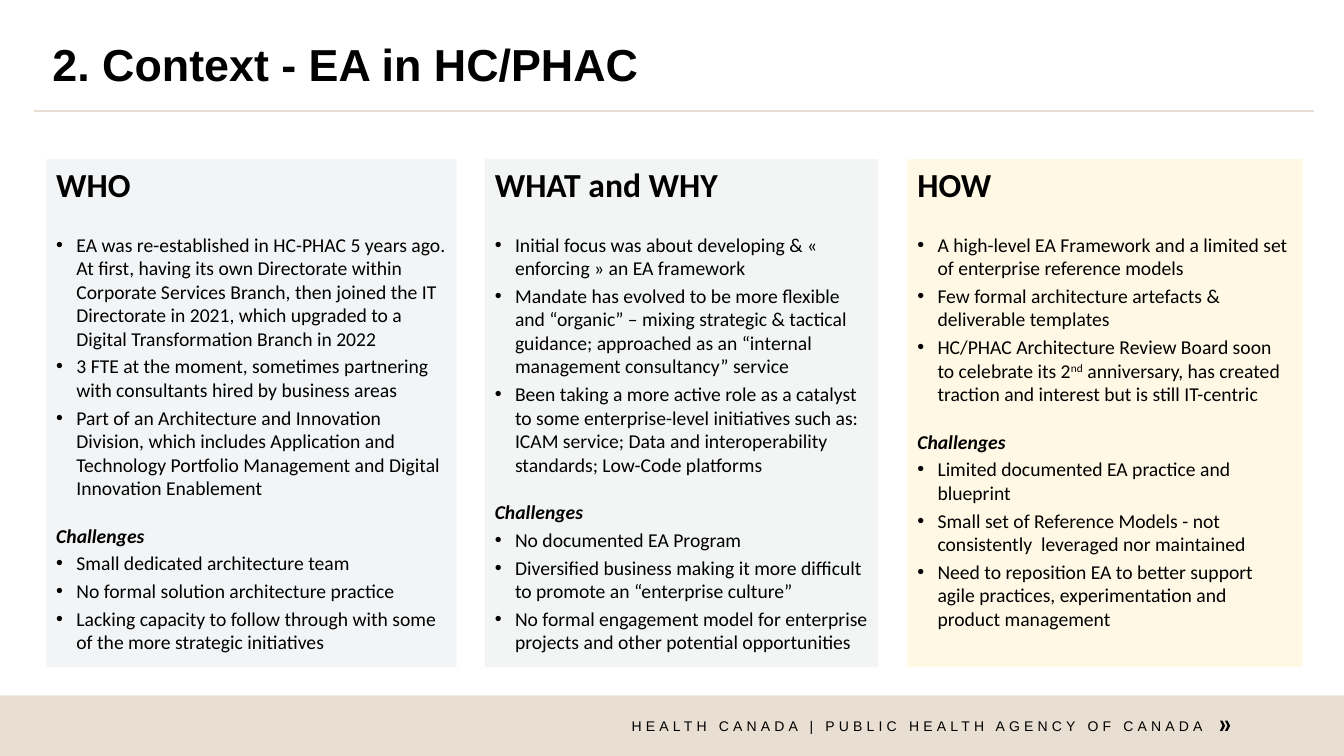
from lxml import etree
from pptx import Presentation
from pptx.dml.color import RGBColor
from pptx.enum.shapes import MSO_CONNECTOR, MSO_SHAPE
from pptx.enum.text import MSO_ANCHOR, PP_ALIGN
from pptx.oxml.ns import qn
from pptx.util import Inches, Pt

COLORS = {
    "text": "000000",
    "band": "E8DFD2",
    "who": "E6EAEF",
    "what": "E8EDED",
    "how": "FFF3CD",
}
COLUMN_TOP, COLUMN_HEIGHT = 1.58, 5.04
BLANK_LINE = 17  # points, one line of 14 pt text
BULLET_GAP = 3

# left, width, colour, heading, facts, challenges
COLUMNS = [
    (0.46, 4.07, "who", "WHO", [
        "EA was re-established in HC-PHAC 5 years ago. At first, having its own "
        "Directorate within Corporate Services Branch, then joined the IT Directorate "
        "in 2021, which upgraded to a Digital Transformation Branch in 2022",
        "3 FTE at the moment, sometimes partnering with consultants hired by business areas",
        "Part of an Architecture and Innovation Division, which includes Application and "
        "Technology Portfolio Management and Digital Innovation Enablement",
    ], [
        "Small dedicated architecture team",
        "No formal solution architecture practice",
        "Lacking capacity to follow through with some of the more strategic initiatives",
    ]),
    (4.81, 3.9, "what", "WHAT and WHY", [
        "Initial focus was about developing & « enforcing » an EA framework",
        "Mandate has evolved to be more flexible and “organic” – mixing strategic & tactical "
        "guidance; approached as an “internal management consultancy” service",
        "Been taking a more active role as a catalyst to some enterprise-level initiatives "
        "such as: ICAM service; Data and interoperability standards; Low-Code platforms",
    ], [
        "No documented EA Program",
        "Diversified business making it more difficult to promote an “enterprise culture”",
        "No formal engagement model for enterprise projects and other potential opportunities",
    ]),
    (9, 3.92, "how", "HOW", [
        "A high-level EA Framework and a limited set of enterprise reference models",
        "Few formal architecture artefacts & deliverable templates",
        ("HC/PHAC Architecture Review Board soon to celebrate its 2", "nd",
         " anniversary, has created traction and interest but is still IT-centric"),
    ], [
        "Limited documented EA practice and blueprint",
        "Small set of Reference Models - not consistently  leveraged nor maintained",
        "Need to reposition EA to better support agile practices, experimentation and "
        "product management",
    ]),
]


def rgb(name):
    return RGBColor.from_string(COLORS[name])


def set_font(paragraph, name, size, bold=False, italic=False):
    font = paragraph.font
    font.name, font.size, font.bold, font.italic = name, Pt(size), bold, italic
    font.color.rgb = rgb("text")


def add_filled_shape(slide, kind, left, top, width, height, color):
    shape = slide.shapes.add_shape(
        kind, Inches(left), Inches(top), Inches(width), Inches(height))
    shape.shadow.inherit = False
    shape.fill.solid()
    shape.fill.fore_color.rgb = rgb(color)
    shape.line.fill.background()
    return shape


def add_title(slide, text):
    title = slide.shapes.title
    title.left, title.top = Inches(0.42), Inches(0.3)
    title.width, title.height = Inches(12.5), Inches(0.73)
    title.text_frame.vertical_anchor = MSO_ANCHOR.MIDDLE
    title.text_frame.text = text
    paragraph = title.text_frame.paragraphs[0]
    paragraph.alignment = PP_ALIGN.LEFT
    paragraph.line_spacing = 0.9
    set_font(paragraph, "Arial", 32, bold=True)


def add_rule(slide):
    rule = slide.shapes.add_connector(
        MSO_CONNECTOR.STRAIGHT, Inches(0.34), Inches(1.1), Inches(13.03), Inches(1.1))
    rule.line.color.rgb = rgb("band")
    rule.line.width = Pt(1.5)
    etree.SubElement(rule._element.spPr, qn("a:effectLst"))


def add_footer(slide):
    add_filled_shape(slide, MSO_SHAPE.RECTANGLE, 0, 6.9, 13.33, 0.6, "band")
    for left in (12.1, 12.15):
        add_filled_shape(slide, MSO_SHAPE.CHEVRON, left, 7.15, 0.05, 0.1, "text")
    box = slide.shapes.add_textbox(Inches(5.86), Inches(7.12), Inches(6.07), Inches(0.22))
    frame = box.text_frame
    frame.word_wrap = True
    frame.margin_left = frame.margin_top = frame.margin_right = 0
    frame.margin_bottom = Inches(0.05)
    paragraph = frame.paragraphs[0]
    paragraph.alignment = PP_ALIGN.RIGHT
    run = paragraph.add_run()
    run.text = "HEALTH CANADA | PUBLIC HEALTH AGENCY OF CANADA"
    run.font._element.set("spc", "300")
    set_font(paragraph, "Arial", 10)


def add_line(paragraph, text, size=14, space_before=0, **style):
    """Fill a paragraph; in a tuple, every second part is superscript."""
    parts = (text,) if isinstance(text, str) else text
    for index, part in enumerate(parts):
        run = paragraph.add_run()
        run.text = part
        if index % 2:
            run.font._element.set("baseline", "30000")
    paragraph.alignment = PP_ALIGN.LEFT
    paragraph.space_before = Pt(space_before)
    set_font(paragraph, "Calibri", size, **style)


def add_bullets(frame, items, first_gap=BULLET_GAP):
    for index, item in enumerate(items):
        paragraph = frame.add_paragraph()
        properties = paragraph._p.get_or_add_pPr()
        properties.set("marL", str(Inches(0.2)))
        properties.set("indent", str(Inches(-0.2)))
        etree.SubElement(properties, qn("a:buFont"), typeface="Arial")
        etree.SubElement(properties, qn("a:buChar"), char="•")
        add_line(paragraph, item, space_before=BULLET_GAP if index else first_gap)


def add_column(slide, left, width, color, heading, facts, challenges):
    panel = add_filled_shape(
        slide, MSO_SHAPE.RECTANGLE, left, COLUMN_TOP, width, COLUMN_HEIGHT, color)
    fill_color = panel._element.spPr.find(qn("a:solidFill"))[0]
    etree.SubElement(fill_color, qn("a:alpha"), val="50000")
    frame = panel.text_frame
    frame.word_wrap = True
    frame.vertical_anchor = MSO_ANCHOR.TOP
    add_line(frame.paragraphs[0], heading, size=24, bold=True)
    add_bullets(frame, facts, first_gap=BLANK_LINE + BULLET_GAP)
    add_line(frame.add_paragraph(), "Challenges", space_before=BLANK_LINE,
             bold=True, italic=True)
    add_bullets(frame, challenges)


def main():
    presentation = Presentation()
    presentation.slide_width = Inches(13.33)
    presentation.slide_height = Inches(7.5)
    slide = presentation.slides.add_slide(presentation.slide_layouts[5])
    add_footer(slide)
    add_rule(slide)
    add_title(slide, "2. Context - EA in HC/PHAC")
    for column in COLUMNS:
        add_column(slide, *column)
    presentation.save("out.pptx")


if __name__ == "__main__":
    main()
